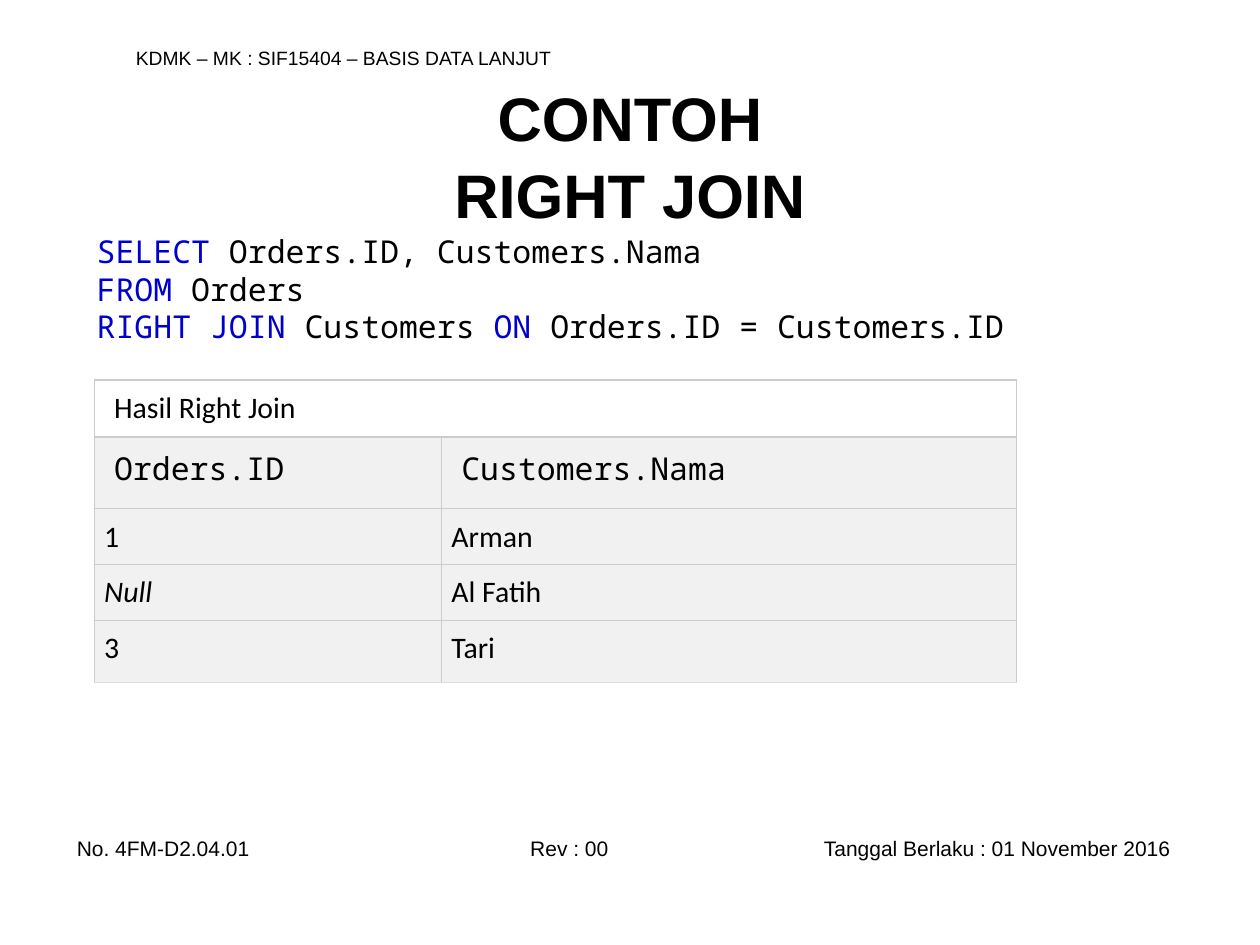
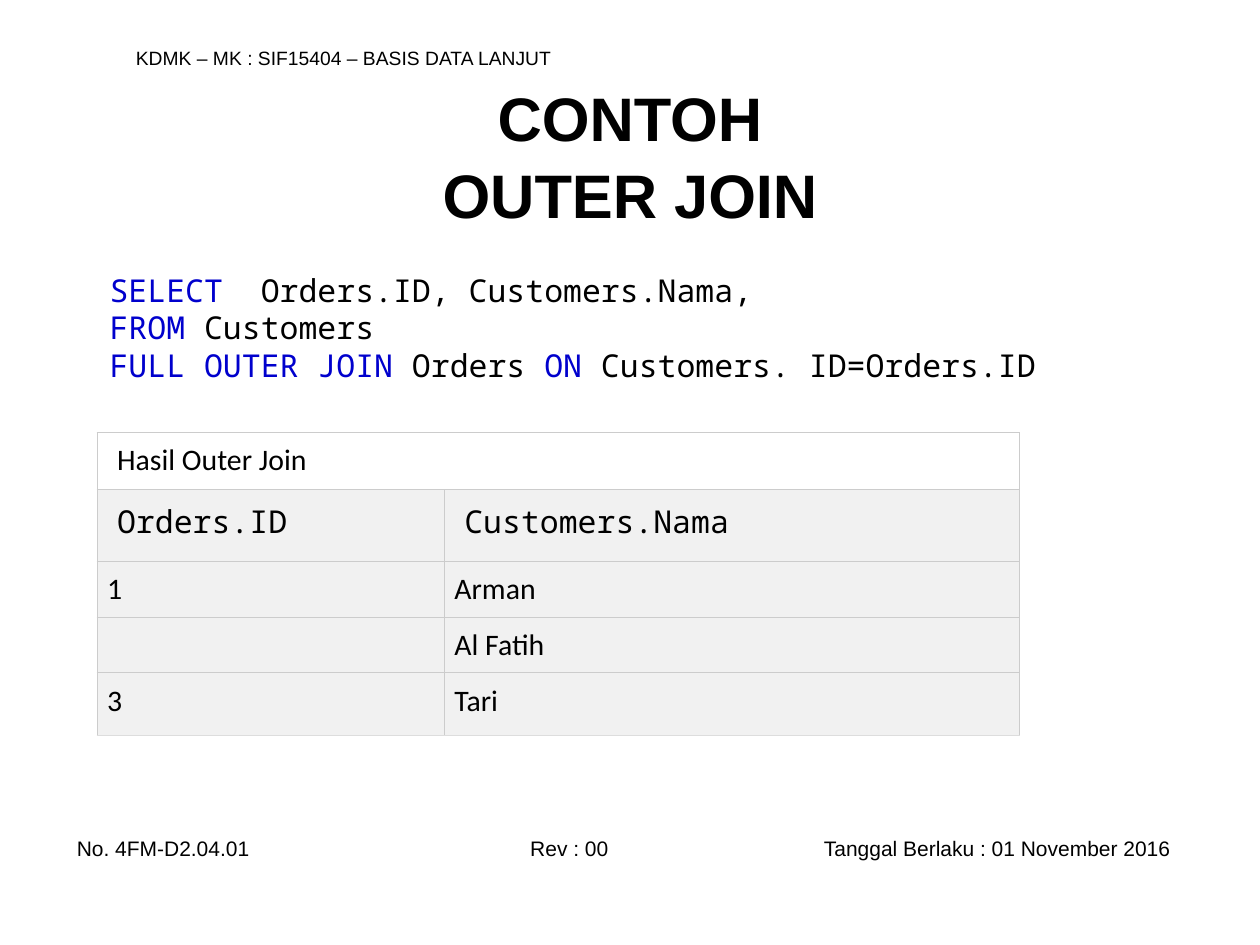
import pptx
import pptx.dml.color
import pptx.enum.text
import pptx.oxml.ns
import pptx.util
from lxml import etree

Cm = pptx.util.Cm
Pt = pptx.util.Pt
RGBColor = pptx.dml.color.RGBColor
ALIGN = pptx.enum.text.PP_ALIGN
ANCHOR = pptx.enum.text.MSO_ANCHOR
qn = pptx.oxml.ns.qn

BLACK = RGBColor(0x00, 0x00, 0x00)
WHITE = RGBColor(0xFF, 0xFF, 0xFF)
KEYWORD_BLUE = RGBColor(0x00, 0x00, 0xCD)
ROW_GREY = RGBColor(0xF1, 0xF1, 0xF1)
GRID_GREY = RGBColor(0xCC, 0xCC, 0xCC)
END_GREY = RGBColor(0xDD, 0xDD, 0xDD)
SANS, BODY, MONO = "Arial", "Calibri", "Noto Sans Mono"

COURSE = "KDMK – MK : SIF15404 – BASIS DATA LANJUT"
FOOTER = ("No. 4FM-D2.04.01", "Rev : 00", "Tanggal Berlaku : 01 November 2016")
FOOTER_TABS = ((Cm(9.14), "l"), (Cm(22.05), "r"))
COLUMN_NAMES = ("Orders.ID", "Customers.Nama")
COLUMN_WIDTHS = (7.0, 11.6)
ROW_HEIGHTS = (1.15, 1.45, 1.12, 1.12, 1.26)

# Each query line alternates keyword and plain text.
EXAMPLES = [
    {
        "title": ("CONTOH", "RIGHT JOIN"),
        "query": [
            ("SELECT", " Orders.ID, Customers.Nama"),
            ("FROM", " Orders"),
            ("RIGHT JOIN", " Customers ", "ON", " Orders.ID = Customers.ID"),
        ],
        "query_box": (1.7, 4.55, 22.43, 2.57),
        "caption": "Hasil Right Join",
        "result": [("1", "Arman"), ("Null", "Al Fatih"), ("3", "Tari")],
        "result_at": (1.9, 7.66),
    },
    {
        "title": ("CONTOH", "OUTER JOIN"),
        "query": [
            ("SELECT", "  Orders.ID, Customers.Nama,"),
            ("FROM", " Customers"),
            ("FULL OUTER JOIN", " Orders ", "ON", " Customers. ID=Orders.ID"),
        ],
        "query_box": (1.96, 5.33, 20.75, 3.33),
        "caption": "Hasil Outer Join",
        "result": [("1", "Arman"), ("", "Al Fatih"), ("3", "Tari")],
        "result_at": (1.96, 8.72),
    },
]


def style(paragraph, face, size, bold=False, italic=False):
    font = paragraph.font
    font.name, font.size = face, Pt(size)
    font.bold, font.italic = bold, italic
    font.color.rgb = BLACK


def add_text_frame(slide, box, anchor=ANCHOR.MIDDLE):
    frame = slide.shapes.add_textbox(*(Cm(length) for length in box)).text_frame
    frame.word_wrap = True
    frame.vertical_anchor = anchor
    return frame


def paragraphs_for(frame, lines):
    """Yield one paragraph with each line, reusing the frame's first one."""
    for index, line in enumerate(lines):
        yield (frame.add_paragraph() if index else frame.paragraphs[0]), line


def add_bands(slide):
    course = add_text_frame(slide, (2.49, 0.79, 21.21, 0.74)).paragraphs[0]
    course.text = COURSE
    style(course, SANS, 11)

    frame = add_text_frame(slide, (0.46, 16.71, 23.6, 0.76))
    frame.margin_left = Cm(1.09)
    footer = frame.paragraphs[0]
    tab_list = etree.SubElement(footer._p.get_or_add_pPr(), qn("a:tabLst"))
    for position, side in FOOTER_TABS:
        etree.SubElement(tab_list, qn("a:tab"), pos=str(position), algn=side)
    footer.text = "\t".join(FOOTER)
    style(footer, SANS, 12)


def add_title(slide, lines):
    frame = add_text_frame(slide, (1.27, 1.55, 22.86, 3.18))
    for paragraph, line in paragraphs_for(frame, lines):
        paragraph.text = line
        paragraph.alignment = ALIGN.CENTER
        if line != lines[0]:
            paragraph.space_before = Pt(2)
        style(paragraph, SANS, 35.1, bold=True)


def add_query(slide, lines, box):
    frame = add_text_frame(slide, box, ANCHOR.TOP)
    for paragraph, line in paragraphs_for(frame, lines):
        style(paragraph, MONO, 18)
        for index, part in enumerate(line):
            run = paragraph.add_run()
            run.text = part
            run.font.color.rgb = BLACK if index % 2 else KEYWORD_BLUE


def set_borders(cell, bottom):
    properties = cell._tc.get_or_add_tcPr()
    sides = (("L", GRID_GREY), ("R", GRID_GREY), ("T", GRID_GREY), ("B", bottom))
    for index, (side, color) in enumerate(sides):
        line = etree.Element(qn("a:ln" + side), w=str(Pt(0.75)))
        fill = etree.SubElement(line, qn("a:solidFill"))
        etree.SubElement(fill, qn("a:srgbClr"), val=str(color))
        properties.insert(index, line)


def add_result(slide, caption, result, position):
    rows = [(caption, ""), COLUMN_NAMES, *result]
    left, top = position
    table = slide.shapes.add_table(
        len(rows), len(COLUMN_WIDTHS), Cm(left), Cm(top),
        Cm(sum(COLUMN_WIDTHS)), Cm(sum(ROW_HEIGHTS))).table
    table.first_row = table.horz_banding = False
    for column, width in zip(table.columns, COLUMN_WIDTHS):
        column.width = Cm(width)
    for row, height in zip(table.rows, ROW_HEIGHTS):
        row.height = Cm(height)
    table.cell(0, 0).merge(table.cell(0, 1))

    for row_index, values in enumerate(rows):
        is_last = row_index == len(rows) - 1
        for column_index, value in enumerate(values):
            cell = table.cell(row_index, column_index)
            cell.fill.solid()
            cell.fill.fore_color.rgb = ROW_GREY if row_index else WHITE
            set_borders(cell, END_GREY if is_last else GRID_GREY)
            if not value:
                continue
            cell.margin_top = cell.margin_right = cell.margin_bottom = Cm(0.2)
            cell.margin_left = Cm(0.4 if row_index < 2 else 0.2)
            cell.text = value
            face, size = (MONO, 18) if row_index == 1 else (BODY, 17)
            style(cell.text_frame.paragraphs[0], face, size, italic=value == "Null")


def main():
    deck = pptx.Presentation()
    deck.slide_width, deck.slide_height = Cm(25.4), Cm(19.05)
    for example in EXAMPLES:
        slide = deck.slides.add_slide(deck.slide_layouts[6])
        add_bands(slide)
        add_title(slide, example["title"])
        add_result(slide, example["caption"], example["result"], example["result_at"])
        add_query(slide, example["query"], example["query_box"])
    deck.save("out.pptx")


if __name__ == "__main__":
    main()
